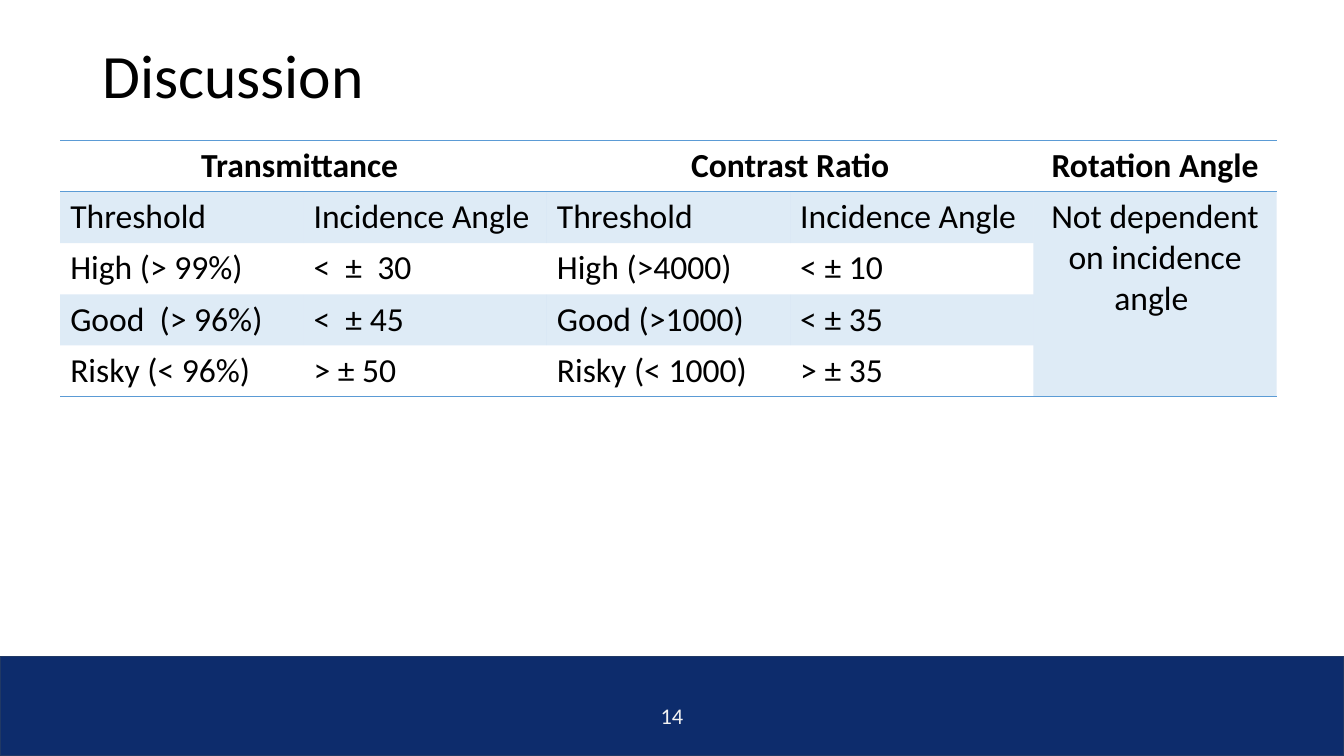
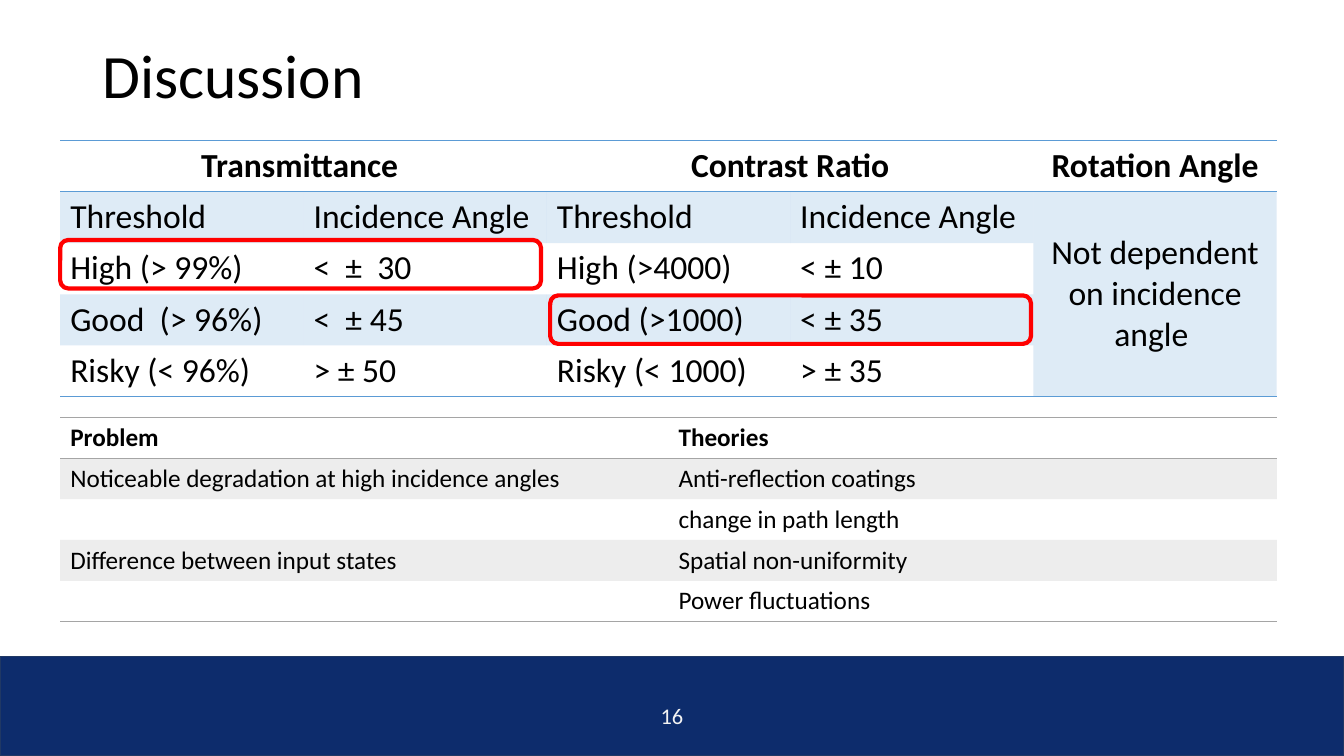
from dataclasses import dataclass

from lxml import etree
from pptx import Presentation
from pptx.dml.color import RGBColor
from pptx.enum import shapes, text
from pptx.oxml import ns
from pptx.util import Pt

NO_STYLE = "{2D5ABB26-0587-4C30-8999-92F81FD0307C}"
SLIDE_WIDTH, SLIDE_HEIGHT = 960, 540
TABLE_LEFT, TABLE_WIDTH = 43, 869
CENTER = text.PP_ALIGN.CENTER
LEFT = text.PP_ALIGN.LEFT
TOP = text.MSO_ANCHOR.TOP
MIDDLE = text.MSO_ANCHOR.MIDDLE


@dataclass(frozen=True)
class Theme:
    font: str = "Calibri"
    ink: str = "000000"
    band: str = "0D2C6C"
    band_line: str = "203864"
    number: str = "F2F2F2"
    blue: str = "5B9BD5"
    gray: str = "A5A5A5"
    highlight: str = "FF0000"
    title_size: int = 44
    large_size: int = 24
    small_size: int = 18
    number_size: int = 16
    tint: int = 20


def rgb(color):
    return RGBColor.from_string(color)


def add_element(parent, tag, **attributes):
    return etree.SubElement(parent, ns.qn(tag), attributes)


def add_border(cell, side, color):
    """Draw a 1 pt line on one side ("a:lnT" or "a:lnB") of a table cell."""
    properties = cell._tc.get_or_add_tcPr()
    line = add_element(properties, side, w=str(Pt(1)))
    add_element(add_element(line, "a:solidFill"), "a:srgbClr", val=color)
    properties.insert(0, line)


class Deck:
    def __init__(self, theme):
        self.theme = theme
        self.presentation = Presentation()
        self.presentation.slide_width = Pt(SLIDE_WIDTH)
        self.presentation.slide_height = Pt(SLIDE_HEIGHT)
        self.slide = None

    def add_slide(self, title, number):
        """Start a slide with the shared band, title and page number."""
        theme = self.theme
        self.slide = self.presentation.slides.add_slide(self.presentation.slide_layouts[6])
        band = self.add_shape(shapes.MSO_SHAPE.RECTANGLE, (0, 469, SLIDE_WIDTH, 71),
                              theme.band_line, 1)
        band.fill.solid()
        band.fill.fore_color.rgb = rgb(theme.band)
        heading = self.add_text(title, (66, 28.8, 828, 104), theme.title_size, theme.ink)
        heading.paragraphs[0].line_spacing = 0.9
        self.add_text(str(number), (372, 497, 216, 28.8), theme.number_size,
                      theme.number, CENTER, MIDDLE)

    def add_shape(self, kind, box, line_color, line_width):
        shape = self.slide.shapes.add_shape(kind, *map(Pt, box))
        shape.shadow.inherit = False
        shape.fill.background()
        shape.line.color.rgb = rgb(line_color)
        shape.line.width = Pt(line_width)
        return shape

    def add_highlight(self, left, top):
        self.add_shape(shapes.MSO_SHAPE.ROUNDED_RECTANGLE, (left, top, 343.5, 34.6),
                       self.theme.highlight, 3)

    def add_text(self, content, box, size, color, alignment=LEFT, anchor=TOP):
        frame = self.slide.shapes.add_textbox(*map(Pt, box)).text_frame
        frame.word_wrap = True
        frame.vertical_anchor = anchor
        self.set_text(frame, content, size, color, alignment)
        return frame

    def set_text(self, frame, content, size, color, alignment, bold=False):
        frame.text = content
        paragraph = frame.paragraphs[0]
        paragraph.alignment = alignment
        for run in paragraph.runs:
            run.font.name = self.theme.font
            run.font.size = Pt(size)
            run.font.bold = bold
            run.font.color.rgb = rgb(color)

    def add_table(self, rows, top, row_height, size, accent, merges=(),
                  header_alignment=LEFT, merge_anchor=TOP):
        """Add a ruled table; merges holds (top, left, bottom, right) cell ranges."""
        column_count, last_row = len(rows[0]), len(rows) - 1
        frame = self.slide.shapes.add_table(
            len(rows), column_count, Pt(TABLE_LEFT), Pt(top),
            Pt(TABLE_WIDTH), Pt(row_height * len(rows)))
        table = frame.table
        table.first_row = table.horz_banding = False
        table._tbl.tblPr.find(ns.qn("a:tableStyleId")).text = NO_STYLE
        for column in table.columns:
            column.width = Pt(TABLE_WIDTH / column_count)
        for row in table.rows:
            row.height = Pt(row_height)
        for first_row, first_column, end_row, end_column in merges:
            table.cell(first_row, first_column).merge(table.cell(end_row, end_column))

        for row_index, values in enumerate(rows):
            for column_index, value in enumerate(values):
                cell = table.cell(row_index, column_index)
                is_header = row_index == 0
                alignment = header_alignment if is_header else LEFT
                bottom_row = row_index
                if cell.is_merge_origin:
                    alignment = CENTER
                    cell.vertical_anchor = merge_anchor
                    bottom_row += cell.span_height - 1
                self.set_text(cell.text_frame, value, size, self.theme.ink, alignment, is_header)
                self.fill_cell(cell, accent if row_index % 2 else None)
                if is_header or bottom_row == last_row:
                    add_border(cell, "a:lnB", accent)
                if is_header:
                    add_border(cell, "a:lnT", accent)

    def fill_cell(self, cell, color):
        if color is None:
            cell.fill.background()
            return
        cell.fill.solid()
        cell.fill.fore_color.rgb = rgb(color)
        color_element = cell._tc.tcPr.find(ns.qn("a:solidFill"))[0]
        add_element(color_element, "a:alpha", val=str(self.theme.tint * 1000))

    def add_threshold_table(self, note_anchor):
        self.add_table(THRESHOLDS, 100.4, 36.6, self.theme.large_size, self.theme.blue,
                       THRESHOLD_MERGES, CENTER, note_anchor)


THRESHOLDS = [
    ["Transmittance ", "", "Contrast Ratio", "", "Rotation Angle"],
    ["Threshold", "Incidence Angle", "Threshold", "Incidence Angle",
     "Not dependent on incidence angle "],
    ["High (> 99%)", "<  ±  30", "High (>4000)", "< ± 10", ""],
    ["Good  (> 96%)", "<  ± 45", "Good (>1000)", "< ± 35", ""],
    ["Risky (< 96%)", "> ± 50", "Risky (< 1000)", "> ± 35", ""],
]
THRESHOLD_MERGES = [(0, 0, 0, 1), (0, 2, 0, 3), (1, 4, 4, 4)]
PROBLEMS = [
    ["Problem", "Theories"],
    ["Noticeable degradation at high incidence angles", "Anti-reflection coatings"],
    ["", "change in path length"],
    ["Difference between input states", "Spatial non-uniformity"],
    ["", "Power fluctuations"],
]


def main():
    theme = Theme()
    deck = Deck(theme)

    deck.add_slide("Discussion", 14)
    deck.add_threshold_table(TOP)

    deck.add_slide("Discussion", 16)
    deck.add_threshold_table(MIDDLE)
    deck.add_table(PROBLEMS, 298, 29.25, theme.small_size, theme.gray)
    deck.add_highlight(43, 171.4)
    deck.add_highlight(393, 211)

    deck.presentation.save("out.pptx")


if __name__ == "__main__":
    main()
